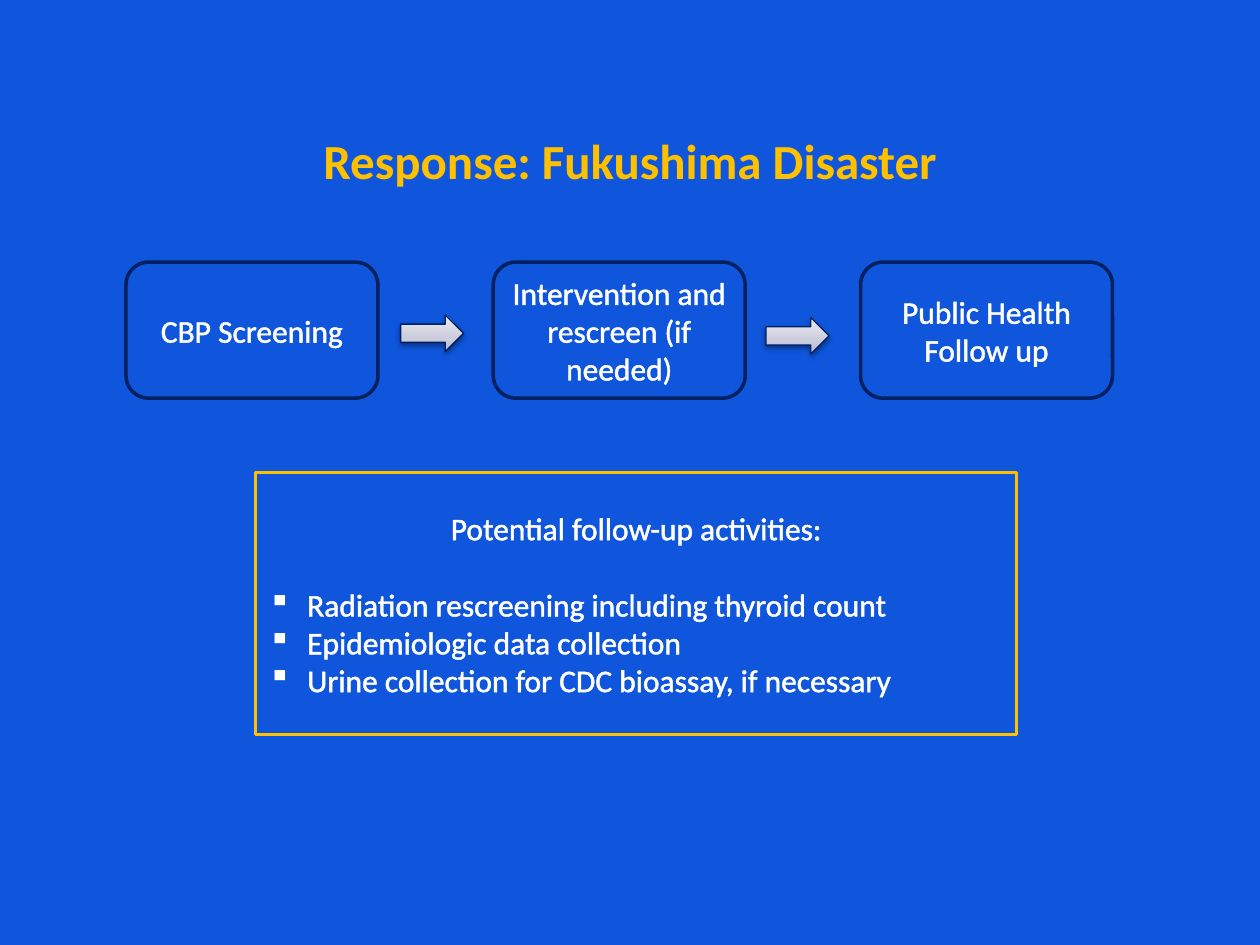
from copy import deepcopy

from lxml import etree
from pptx import Presentation
from pptx.dml.color import RGBColor
from pptx.enum.shapes import MSO_SHAPE as Shape
from pptx.enum.text import MSO_ANCHOR as Anchor, PP_ALIGN as Align
from pptx.oxml import parse_xml
from pptx.oxml.ns import nsdecls, qn
from pptx.util import Inches, Pt

BLUE = RGBColor(0x0F, 0x56, 0xDC)
NAVY = RGBColor(0x00, 0x20, 0x60)
ARROW_LINE = RGBColor(0x00, 0x1F, 0x5E)
GOLD = RGBColor(0xFF, 0xC0, 0x00)
WHITE = RGBColor(0xFF, 0xFF, 0xFF)
ARROW_STOPS = [
    (0, RGBColor(0xB4, 0xB6, 0xCE)),
    (0.35, RGBColor(0xCB, 0xCC, 0xDC)),
    (1, RGBColor(0xEB, 0xEC, 0xF2)),
]


def write(paragraph, text, size=18, color=WHITE, bold=False, align=Align.CENTER,
          bullet=None, outline=True):
    properties = paragraph._p.get_or_add_pPr()
    if bullet:
        properties.set("marL", str(Inches(0.31)))
        properties.set("indent", str(-Inches(0.31)))
        etree.SubElement(properties, qn("a:buChar")).set("char", bullet)
    paragraph.alignment = align
    run = paragraph.add_run()
    run.text = text
    run.font.name = "Calibri"
    run.font.size = Pt(size)
    run.font.bold = bold
    run.font.color.rgb = color
    if outline:
        run.font._element.insert(0, parse_xml(
            f'<a:ln {nsdecls("a")} w="12700"><a:solidFill>'
            f'<a:srgbClr val="{color}"/></a:solidFill></a:ln>'))


def add_box(kind, left, top, width, height, line_color):
    shape = slide.shapes.add_shape(
        kind, Inches(left), Inches(top), Inches(width), Inches(height))
    shape.shadow.inherit = False
    shape.fill.solid()
    shape.fill.fore_color.rgb = BLUE
    shape.line.color.rgb = line_color
    shape.line.width = Pt(2)
    shape.text_frame.word_wrap = True
    shape.text_frame.vertical_anchor = Anchor.MIDDLE
    return shape


presentation = Presentation()
presentation.slide_width = Inches(10)
presentation.slide_height = Inches(7.5)
slide = presentation.slides.add_slide(presentation.slide_layouts[5])
slide.background.fill.solid()
slide.background.fill.fore_color.rgb = BLUE

title = slide.shapes.title
title.left, title.top = Inches(0.5), Inches(0.3)
title.width, title.height = Inches(9), Inches(1.25)
title.text_frame.vertical_anchor = Anchor.BOTTOM
heading = title.text_frame.paragraphs[0]
heading.line_spacing = Pt(30)
write(heading, "Response: Fukushima Disaster", size=28, color=GOLD, bold=True,
      outline=False)

# Process steps
steps = ["CBP Screening", "Intervention and rescreen (if needed)",
         "Public Health Follow up"]
for index, step in enumerate(steps):
    box = add_box(Shape.ROUNDED_RECTANGLE, 1 + 2.915 * index, 2.08, 2, 1.08, NAVY)
    write(box.text_frame.paragraphs[0], step)

# Follow-up activities
activities = ["Radiation rescreening including thyroid count",
              "Epidemiologic data collection",
              "Urine collection for CDC bioassay, if necessary"]
panel = add_box(Shape.RECTANGLE, 2.03, 3.75, 6.04, 2.08, GOLD)
frame = panel.text_frame
write(frame.paragraphs[0], "Potential follow-up activities:")
frame.paragraphs[0].space_after = Pt(22)
for activity in activities:
    write(frame.add_paragraph(), activity, align=Align.LEFT, bullet="▪")

# Arrows between the steps
for left, top in [(3.18, 2.5), (6.08, 2.52)]:
    arrow = slide.shapes.add_shape(
        Shape.RIGHT_ARROW, Inches(left), Inches(top), Inches(0.5), Inches(0.29))
    arrow.fill.gradient()
    arrow.fill.gradient_angle = 90
    first_stop = arrow._element.spPr.find(".//" + qn("a:gs"))
    first_stop.addnext(deepcopy(first_stop))
    for stop, (position, color) in zip(arrow.fill.gradient_stops, ARROW_STOPS):
        stop.position = position
        stop.color.rgb = color
    arrow.line.color.rgb = ARROW_LINE
    arrow.line.width = Pt(0.75)
    arrow.shadow.inherit = False
    effects = arrow._element.spPr.find(qn("a:effectLst"))
    effects.append(parse_xml(
        f'<a:outerShdw {nsdecls("a")} blurRad="{Pt(3.1)}" dist="{Pt(1.6)}" '
        'dir="5400000" rotWithShape="0"><a:srgbClr val="000000">'
        '<a:alpha val="38000"/></a:srgbClr></a:outerShdw>'))

presentation.save("out.pptx")
